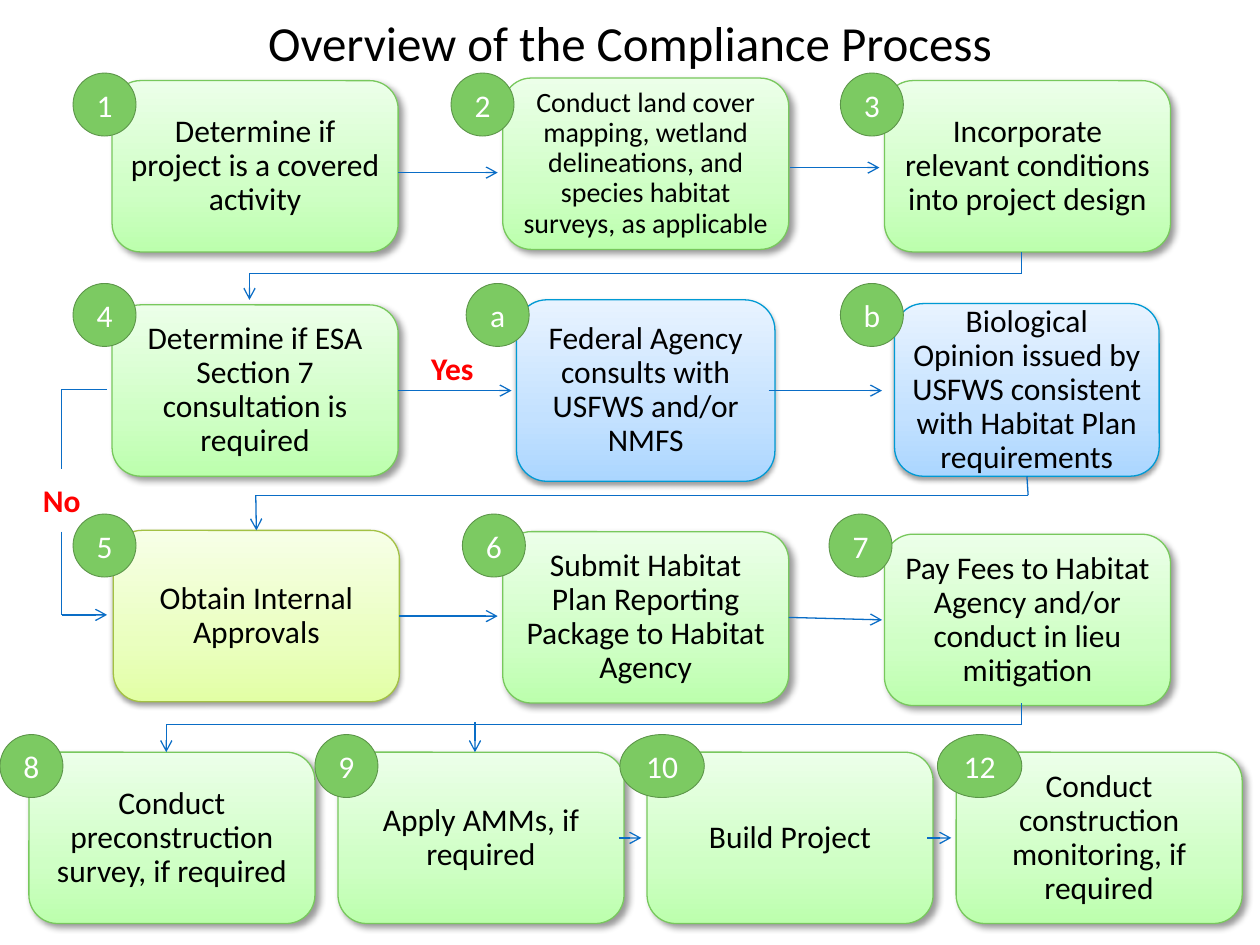
import pptx
import pptx.dml.color
import pptx.enum.shapes
import pptx.enum.text
import pptx.oxml
import pptx.oxml.ns
import pptx.util
from pptx.util import Inches

RGBColor = pptx.dml.color.RGBColor
MSO_SHAPE = pptx.enum.shapes.MSO_SHAPE
MSO_CONNECTOR = pptx.enum.shapes.MSO_CONNECTOR
BLACK = RGBColor(0x00, 0x00, 0x00)
WHITE = RGBColor(0xFF, 0xFF, 0xFF)
RED = RGBColor(0xFF, 0x00, 0x00)
ARROW_BLUE = RGBColor(0x0A, 0x6D, 0xC6)
BADGE_FILL = RGBColor(0x7C, 0xCA, 0x62)
BADGE_LINE = RGBColor(0x5C, 0x95, 0x49)

# Step style: outline, gradient stops from bottom to top, shadow blur, distance, angle, opacity
GREEN = (RGBColor(0x78, 0xC8, 0x5D),
         (RGBColor(0xBC, 0xFF, 0xAD), RGBColor(0xCF, 0xFF, 0xC5), RGBColor(0xEC, 0xFF, 0xE9)),
         (4, 3, 45, 40))
BLUE = (RGBColor(0x00, 0x9A, 0xD4),
        (RGBColor(0xAB, 0xD6, 0xFF), RGBColor(0xC3, 0xE1, 0xFF), RGBColor(0xE8, 0xF3, 0xFF)),
        (3.1, 1.6, 90, 38))
LIME = (RGBColor(0xA3, 0xC1, 0x44),
        (RGBColor(0xE2, 0xFF, 0xA5), RGBColor(0xEA, 0xFF, 0xBF), RGBColor(0xF7, 0xFF, 0xE7)),
        (3.1, 1.6, 90, 38))
DRAWING_NS = pptx.oxml.ns.nsdecls("a")


def write_centred(shape, text, size, color, bold=False):
    frame = shape.text_frame
    frame.word_wrap = True
    frame.vertical_anchor = pptx.enum.text.MSO_ANCHOR.MIDDLE
    frame.text = text
    paragraph = frame.paragraphs[0]
    paragraph.alignment = pptx.enum.text.PP_ALIGN.CENTER
    paragraph.font.name = "Calibri"
    paragraph.font.size = pptx.util.Pt(size)
    paragraph.font.bold = bold
    paragraph.font.color.rgb = color
    return paragraph


def connect(x1, y1, x2, y2, arrow=False, kind=MSO_CONNECTOR.STRAIGHT):
    connector = slide.shapes.add_connector(kind, Inches(x1), Inches(y1), Inches(x2), Inches(y2))
    connector.line.color.rgb = ARROW_BLUE
    connector.line.width = pptx.util.Pt(0.75)
    properties = connector._element.spPr
    if arrow:
        properties.find(pptx.oxml.ns.qn("a:ln")).append(
            pptx.oxml.parse_xml(f'<a:tailEnd {DRAWING_NS} type="arrow"/>'))
    properties.append(pptx.oxml.parse_xml(f"<a:effectLst {DRAWING_NS}/>"))
    return connector


presentation = pptx.Presentation()
presentation.slide_width = Inches(10)
presentation.slide_height = Inches(7.5)
slide = presentation.slides.add_slide(presentation.slide_layouts[5])

title = slide.shapes.title
title.left, title.top = Inches(0), Inches(-0.08)
title.width, title.height = Inches(10), Inches(0.83)
write_centred(title, "Overview of the Compliance Process", 28, BLACK)

STEP_W, STEP_H = 2.27, 1.36
LAST_ROW_LEFT, LAST_ROW_STEP, LAST_ROW_TOP = 0.23, 2.453, 5.97
last_row = [LAST_ROW_LEFT + i * LAST_ROW_STEP for i in range(4)]

# Badge, text, left, top, width, height, size, style, badge left, badge top, badge width
steps = [
    ("1", "Determine if project is a covered activity",
     0.89, 0.64, STEP_W, STEP_H, 18, GREEN, 0.58, 0.58, 0.5),
    ("2", "Conduct land cover mapping, wetland delineations, and species habitat surveys, "
     "as applicable", 3.99, 0.62, STEP_W, STEP_H, 16, GREEN, 3.58, 0.58, 0.5),
    ("3", "Incorporate relevant conditions into project design",
     7.02, 0.64, STEP_W, STEP_H, 18, GREEN, 6.67, 0.58, 0.5),
    ("4", "Determine if ESA Section 7 consultation is required",
     0.89, 2.42, STEP_W, STEP_H, 18, GREEN, 0.58, 2.25, 0.5),
    ("a", "Federal Agency consults with USFWS and/or NMFS",
     4.1, 2.38, 2.05, 1.44, 18, BLUE, 3.7, 2.25, 0.5),
    ("b", "Biological Opinion issued by USFWS consistent with Habitat Plan requirements",
     7.1, 2.41, 2.1, 1.37, 18, BLUE, 6.67, 2.25, 0.5),
    ("5", "Obtain Internal Approvals",
     0.9, 4.21, STEP_W, STEP_H, 18, LIME, 0.58, 4.08, 0.5),
    ("6", "Submit Habitat Plan Reporting Package to Habitat Agency",
     3.99, 4.22, STEP_W, STEP_H, 18, GREEN, 3.67, 4.08, 0.5),
    ("7", "Pay Fees to Habitat Agency and/or conduct in lieu mitigation",
     7.02, 4.24, STEP_W, STEP_H, 18, GREEN, 6.58, 4.08, 0.5),
    ("8", "Conduct preconstruction survey, if required",
     last_row[0], LAST_ROW_TOP, STEP_W, STEP_H, 18, GREEN, 0, 5.83, 0.5),
    ("9", "Apply AMMs, if required",
     last_row[1], LAST_ROW_TOP, STEP_W, STEP_H, 18, GREEN, 2.5, 5.83, 0.5),
    ("10", "Build Project",
     last_row[2], LAST_ROW_TOP, STEP_W, STEP_H, 18, GREEN, 4.92, 5.83, 0.67),
    ("12", "Conduct construction monitoring, if required",
     last_row[3], LAST_ROW_TOP, STEP_W, STEP_H, 18, GREEN, 7.44, 5.83, 0.67),
]

boxes = {}
for badge_text, text, left, top, width, height, size, style, *_ in steps:
    outline, stops, (blur, distance, angle, opacity) = style
    box = slide.shapes.add_shape(MSO_SHAPE.ROUNDED_RECTANGLE, Inches(left), Inches(top),
                                 Inches(width), Inches(height))
    box.line.color.rgb = outline
    box.line.width = pptx.util.Pt(0.75)
    box.fill.gradient()
    gradient = box._element.spPr.find(pptx.oxml.ns.qn("a:gradFill"))
    stop_xml = "".join(f'<a:gs pos="{position}000"><a:srgbClr val="{color}"/></a:gs>'
                       for position, color in zip((0, 35, 100), stops))
    gradient.getparent().replace(gradient, pptx.oxml.parse_xml(
        f'<a:gradFill {DRAWING_NS} rotWithShape="1"><a:gsLst>{stop_xml}</a:gsLst>'
        '<a:lin ang="16200000" scaled="0"/></a:gradFill>'))
    box.shadow.inherit = False
    box._element.spPr.find(pptx.oxml.ns.qn("a:effectLst")).append(pptx.oxml.parse_xml(
        f'<a:outerShdw {DRAWING_NS} blurRad="{pptx.util.Pt(blur)}" dist="{pptx.util.Pt(distance)}" '
        f'dir="{angle * 60000}" rotWithShape="0"><a:srgbClr val="000000">'
        f'<a:alpha val="{opacity}000"/></a:srgbClr></a:outerShdw>'))
    paragraph = write_centred(box, text, size, BLACK)
    paragraph.line_spacing = 0.9
    frame = box.text_frame
    frame.margin_left = frame.margin_right = Inches(0.07)
    frame.margin_top = frame.margin_bottom = Inches(0.07)
    boxes[badge_text] = box

# Arrows along the rows
connect(3.16, 1.37, 3.95, 1.37, arrow=True)
connect(6.27, 1.33, 6.98, 1.33, arrow=True)
connect(3.16, 3.1, 4.06, 3.1, arrow=True).begin_connect(boxes["4"], 3)
connect(6.1, 3.1, 7, 3.1, arrow=True)
connect(3.16, 4.89, 3.95, 4.89, arrow=True).begin_connect(boxes["5"], 3)
connect(6.27, 4.91, 7, 4.92, arrow=True).begin_connect(boxes["6"], 3)
connect(4.91, 6.65, 5.09, 6.65, arrow=True)
connect(7.36, 6.65, 7.55, 6.65, arrow=True)

# Returns from the end of one row to the start of the next
connect(8.11, 2, 8.11, 2.17)
connect(8.11, 2.17, 1.98, 2.17)
connect(1.98, 2.17, 1.98, 2.38, arrow=True)
connect(8.16, 3.76, 8.16, 3.93).begin_connect(boxes["b"], 2)
connect(8.16, 3.93, 2.03, 3.93)
connect(2.03, 3.93, 2.03, 4.21, arrow=True).end_connect(boxes["5"], 0)
connect(8.11, 5.58, 8.11, 5.75)
connect(8.11, 5.75, 1.32, 5.75)
connect(1.32, 5.75, 1.32, 5.97, arrow=True)
connect(3.77, 5.73, 3.77, 5.97, arrow=True)

# "No" branch from step 4 to step 5, with its corner at the far end of the elbow
no_branch = connect(0.85, 3.09, 0.49, 3.72, kind=MSO_CONNECTOR.ELBOW)
no_branch._element.spPr.prstGeom.get_or_add_avLst().append(
    pptx.oxml.parse_xml(f'<a:gd {DRAWING_NS} name="adj1" fmla="val 100000"/>'))
connect(0.49, 4.22, 0.49, 4.88)
connect(0.49, 4.88, 0.85, 4.88, arrow=True)

for answer, left, top in (("Yes", 3.23, 2.67), ("No", 0.13, 3.72)):
    label = slide.shapes.add_textbox(Inches(left), Inches(top), Inches(0.72), Inches(0.5))
    write_centred(label, answer, 18, RED, bold=True)

for badge_text, *_, left, top, width in steps:
    badge = slide.shapes.add_shape(MSO_SHAPE.OVAL, Inches(left), Inches(top),
                                   Inches(width), Inches(0.5))
    badge.shadow.inherit = False
    badge.fill.solid()
    badge.fill.fore_color.rgb = BADGE_FILL
    badge.line.color.rgb = BADGE_LINE
    badge.line.width = pptx.util.Pt(0.5)
    write_centred(badge, badge_text, 18, WHITE)

presentation.save("out.pptx")
